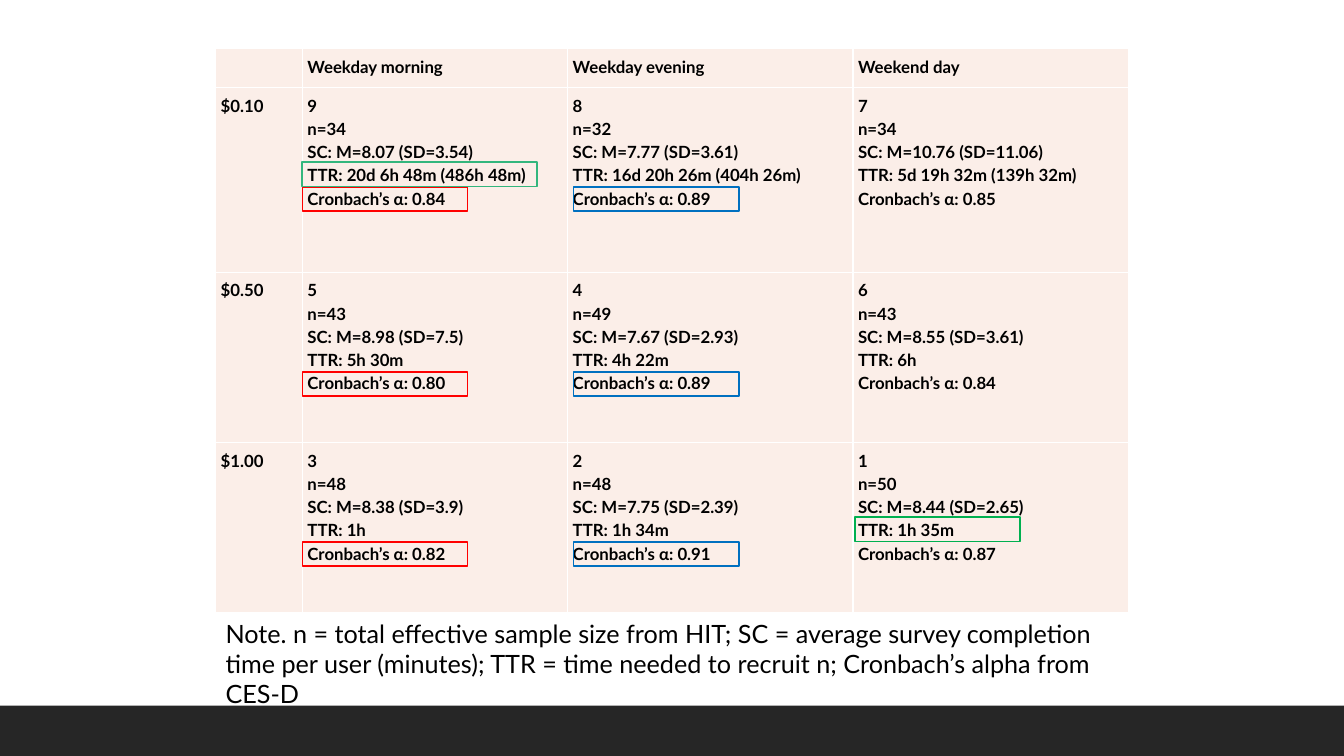
import itertools

import pptx
import pptx.dml.color
import pptx.enum.shapes
import pptx.enum.text
import pptx.oxml
import pptx.oxml.ns
import pptx.util

Pt = pptx.util.Pt
RGBColor = pptx.dml.color.RGBColor

# Content
TIMES = ["Weekday morning", "Weekday evening", "Weekend day"]
# Each condition: number, sample size, survey completion, time to recruit, alpha
PAYMENTS = {
    "$0.10": [
        ("9", "34", "M=8.07 (SD=3.54)", "20d 6h 48m (486h 48m)", "0.84"),
        ("8", "32", "M=7.77 (SD=3.61)", "16d 20h 26m (404h 26m)", "0.89"),
        ("7", "34", "M=10.76 (SD=11.06)", "5d 19h 32m (139h 32m)", "0.85"),
    ],
    "$0.50": [
        ("5", "43", "M=8.98 (SD=7.5)", "5h 30m", "0.80"),
        ("4", "49", "M=7.67 (SD=2.93)", "4h 22m", "0.89"),
        ("6", "43", "M=8.55 (SD=3.61)", "6h", "0.84"),
    ],
    "$1.00": [
        ("3", "48", "M=8.38 (SD=3.9)", "1h", "0.82"),
        ("2", "48", "M=7.75 (SD=2.39)", "1h 34m", "0.91"),
        ("1", "50", "M=8.44 (SD=2.65)", "1h 35m", "0.87"),
    ],
}
NOTE = (
    "Note. n = total effective sample size from HIT; SC = average survey "
    "completion time per user (minutes); TTR = time needed to recruit n; "
    "Cronbach’s alpha from CES-D"
)

# Style
FONT = "Lato"
BLACK = RGBColor(0x00, 0x00, 0x00)
WHITE = RGBColor(0xFF, 0xFF, 0xFF)
DARK = RGBColor(0x26, 0x26, 0x26)
PEACH = RGBColor(0xFB, 0xEE, 0xE8)
RED = RGBColor(0xFF, 0x00, 0x00)
BLUE = RGBColor(0x00, 0x70, 0xC0)
GREEN = RGBColor(0x00, 0xB0, 0x50)
MINT = RGBColor(0x33, 0xB6, 0x7D)

# Layout, in points
SLIDE_WIDTH, SLIDE_HEIGHT = 960, 540
BAR_HEIGHT = 36
TABLE_LEFT, TABLE_TOP = 154, 34.6
COLUMN_WIDTHS = [62, 189.5, 203.8, 196.7]
ROW_HEIGHTS = [28.1, 131.8, 121.7, 121.7]
CELL_MARGIN = 3.6
NOTE_HEIGHT = 51
MARK_HEIGHT = 17.3
TTR_OFFSET, ALPHA_OFFSET = 53.3, 71

# Highlights: table row, table column, shift from column edge, offset in row,
# width, colour
MARKS = [(row, 1, 0, ALPHA_OFFSET, 118, RED) for row in (1, 2, 3)]
MARKS += [(row, 2, 4.2, ALPHA_OFFSET, 118, BLUE) for row in (1, 2, 3)]
MARKS += [
    (3, 3, 1.3, TTR_OFFSET, 118, GREEN),
    (1, 1, -0.5, TTR_OFFSET, 168, MINT),
]

column_lefts = list(itertools.accumulate(COLUMN_WIDTHS, initial=TABLE_LEFT))
row_tops = list(itertools.accumulate(ROW_HEIGHTS, initial=TABLE_TOP))


def set_font(paragraph, size, bold):
    paragraph.font.name = FONT
    paragraph.font.size = Pt(size)
    paragraph.font.bold = bold
    paragraph.font.color.rgb = BLACK


def add_rectangle(slide, left, top, width, height):
    shape = slide.shapes.add_shape(
        pptx.enum.shapes.MSO_SHAPE.RECTANGLE,
        Pt(left), Pt(top), Pt(width), Pt(height),
    )
    shape.shadow.inherit = False
    return shape


def set_borders(cell):
    properties = cell._tc.get_or_add_tcPr()
    for position, side in enumerate(("lnL", "lnR", "lnT", "lnB")):
        border = pptx.oxml.parse_xml(
            f'<a:{side} {pptx.oxml.ns.nsdecls("a")} w="12700"><a:solidFill>'
            f'<a:srgbClr val="{WHITE}"/></a:solidFill></a:{side}>'
        )
        properties.insert(position, border)


def fill_cell(cell, lines):
    cell.margin_left = cell.margin_right = Pt(CELL_MARGIN)
    cell.margin_top = cell.margin_bottom = Pt(CELL_MARGIN)
    cell.fill.solid()
    cell.fill.fore_color.rgb = PEACH
    set_borders(cell)
    cell.text_frame.text = "\n".join(lines)
    for paragraph in cell.text_frame.paragraphs:
        paragraph.alignment = pptx.enum.text.PP_ALIGN.JUSTIFY
        paragraph.line_spacing = 1.15
        set_font(paragraph, 12, True)


def condition_lines(number, size, completion, recruit, alpha):
    return [number, f"n={size}", f"SC: {completion}", f"TTR: {recruit}",
            f"Cronbach’s α: {alpha}"]


def main():
    presentation = pptx.Presentation()
    presentation.slide_width = Pt(SLIDE_WIDTH)
    presentation.slide_height = Pt(SLIDE_HEIGHT)
    slide = presentation.slides.add_slide(presentation.slide_layouts[6])

    # Bottom bar
    bar = add_rectangle(slide, 0, SLIDE_HEIGHT - BAR_HEIGHT, SLIDE_WIDTH, BAR_HEIGHT)
    bar.fill.solid()
    bar.fill.fore_color.rgb = DARK
    bar.line.fill.background()

    # Table of conditions
    rows = [[[""]] + [[time] for time in TIMES]]
    for payment, conditions in PAYMENTS.items():
        rows.append([[payment]] + [condition_lines(*item) for item in conditions])
    table = slide.shapes.add_table(
        len(ROW_HEIGHTS), len(COLUMN_WIDTHS), Pt(TABLE_LEFT), Pt(TABLE_TOP),
        Pt(sum(COLUMN_WIDTHS)), Pt(sum(ROW_HEIGHTS)),
    ).table
    for column, width in zip(table.columns, COLUMN_WIDTHS):
        column.width = Pt(width)
    for row, height, contents in zip(table.rows, ROW_HEIGHTS, rows):
        row.height = Pt(height)
        for cell, lines in zip(row.cells, contents):
            fill_cell(cell, lines)

    # Note below the table
    note = slide.shapes.add_textbox(
        Pt(TABLE_LEFT), Pt(row_tops[-1]), Pt(sum(COLUMN_WIDTHS)), Pt(NOTE_HEIGHT)
    )
    note.text_frame.word_wrap = True
    note.text_frame.auto_size = pptx.enum.text.MSO_AUTO_SIZE.SHAPE_TO_FIT_TEXT
    note.text_frame.text = NOTE
    set_font(note.text_frame.paragraphs[0], 18, False)

    # Highlight frames
    for row, column, shift, offset, width, colour in MARKS:
        mark = add_rectangle(slide, column_lefts[column] + shift,
                             row_tops[row] + offset, width, MARK_HEIGHT)
        mark.fill.background()
        mark.line.color.rgb = colour
        mark.line.width = Pt(1.25)

    presentation.save("out.pptx")


if __name__ == "__main__":
    main()
